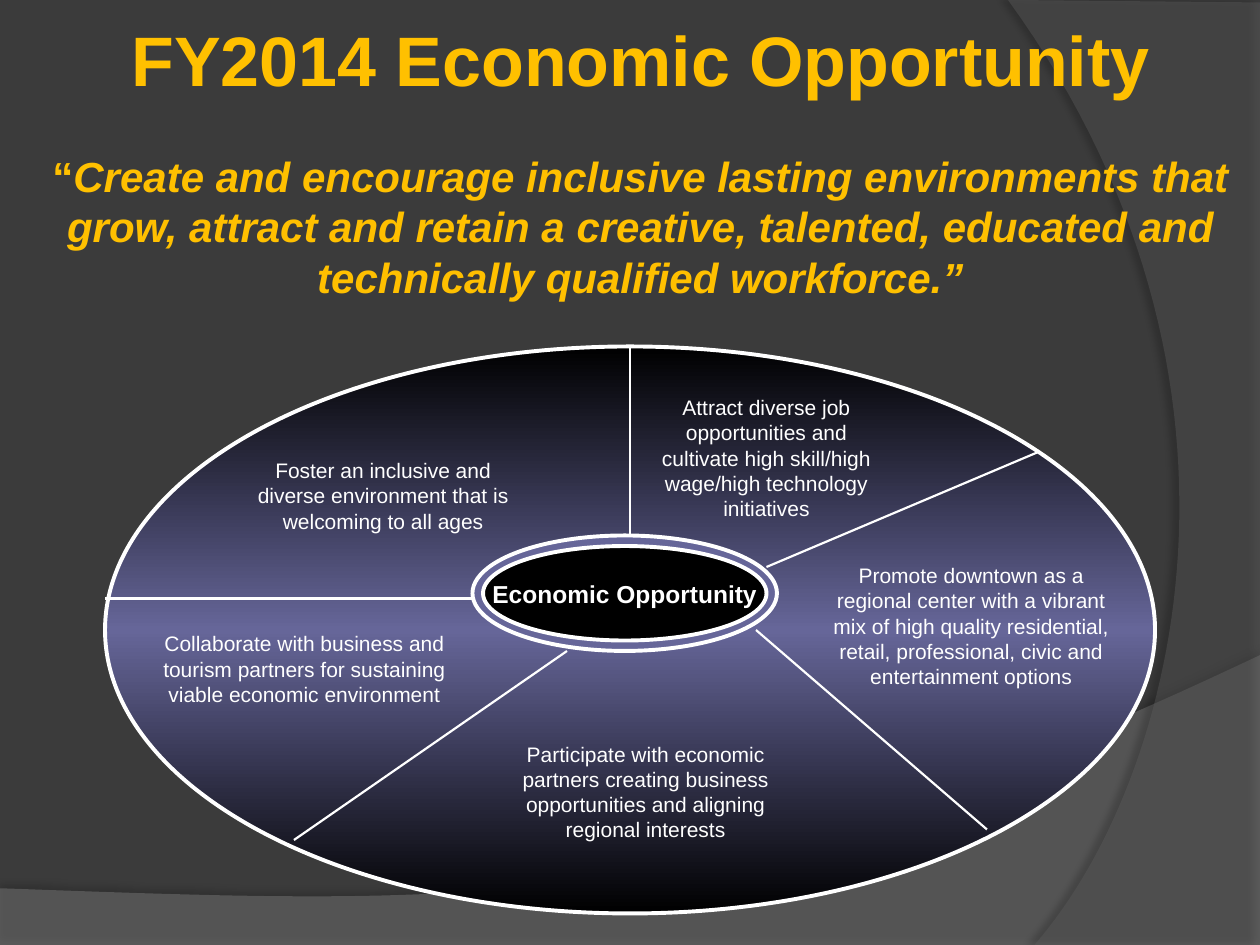
"""Build the FY2014 Economic Opportunity slide."""
from copy import deepcopy
from dataclasses import dataclass

from lxml import etree
from pptx import Presentation
from pptx.dml.color import RGBColor
from pptx.enum.shapes import MSO_CONNECTOR, MSO_SHAPE
from pptx.enum.text import MSO_ANCHOR, PP_ALIGN
from pptx.oxml.ns import qn
from pptx.util import Pt

OVAL = MSO_SHAPE.OVAL
STRAIGHT = MSO_CONNECTOR.STRAIGHT
CENTER = PP_ALIGN.CENTER
MIDDLE = MSO_ANCHOR.MIDDLE

BACKGROUND = RGBColor(0x3B, 0x3B, 0x3B)
FLOOR_GRAY = RGBColor(0x7F, 0x7F, 0x7F)
SIDE_GRAY = RGBColor(0x5E, 0x5E, 0x5E)
BLACK = RGBColor(0, 0, 0)
WHITE = RGBColor(0xFF, 0xFF, 0xFF)
VIOLET = RGBColor(0x66, 0x66, 0x99)
GOLD = RGBColor(0xFF, 0xC0, 0x00)
FONT = "Arial"
CURVE_STEPS = 60

Point = tuple[float, float]


@dataclass
class Swoosh:
    """A translucent backdrop outline: corners closed by one Bezier curve."""
    corners: list[Point]
    controls: list[Point]
    end: Point
    color: RGBColor
    alpha: int
    shadow_alpha: int
    shadow_dist: float
    shadow_angle: int


@dataclass
class Goal:
    """A goal text inside the large oval."""
    left: float
    top: float
    width: float
    height: float
    text: str


@dataclass
class Spoke:
    """A line between two sectors."""
    start: Point
    end: Point


SWOOSHES = [
    Swoosh([(0, 507.6), (0, 540), (720, 540), (720, 374.4)],
           [(402.48, 524.88), (281.52, 517.68)], (0, 507.6),
           FLOOR_GRAY, 45, 35, 3.5, 270),
    Swoosh([(720, 1.44), (720, 540), (591.12, 540)],
           [(673.2, 445.68), (732.96, 216)], (576, 0),
           SIDE_GRAY, 40, 45, 4, 180),
]
GOALS = [
    Goal(282, 420, 174, 65.5, "Participate with economic partners creating business "
         "opportunities and aligning regional interests"),
    Goal(462, 318, 186, 80, "Promote downtown as a regional center with a vibrant mix of "
         "high quality residential, retail, professional, civic and entertainment options"),
    Goal(138, 258, 162, 51, "Foster an inclusive and diverse environment that is "
         "welcoming to all ages"),
    Goal(84, 357, 180, 51, "Collaborate with business and tourism partners for "
         "sustaining viable economic environment"),
    Goal(366, 222, 144, 80, "Attract diverse job opportunities and cultivate high "
         "skill/high wage/high technology initiatives"),
]
SPOKES = [
    Spoke((360, 306), (360, 198)),
    Spoke((270, 342), (60, 342)),
    Spoke((432, 360), (564, 474)),
    Spoke((168, 480), (324, 372)),
    Spoke((438, 324), (594, 258)),
]


def bezier(a: Point, b: Point, c: Point, d: Point) -> list[Point]:
    """Sample a cubic curve, leaving out its first point."""
    points = []
    for i in range(1, CURVE_STEPS + 1):
        t = i / CURVE_STEPS
        u = 1 - t
        points.append(tuple(u**3 * w + 3 * u * u * t * x + 3 * u * t * t * y + t**3 * z
                            for w, x, y, z in zip(a, b, c, d)))
    return points


def add_alpha(color, percent: int) -> None:
    """Give a colour element an opacity."""
    etree.SubElement(color, qn("a:alpha"), val=str(percent * 1000))


def add_swoosh(shapes, swoosh: Swoosh) -> None:
    """Draw a backdrop shape with its soft shadow."""
    outline = swoosh.corners + bezier(swoosh.corners[-1], *swoosh.controls, swoosh.end)
    first, *rest = [(Pt(x), Pt(y)) for x, y in outline]
    fb = shapes.build_freeform(*first)
    fb.add_line_segments(rest)
    s = fb.convert_to_shape()
    s.fill.solid()
    s.fill.fore_color.rgb = swoosh.color
    s.line.fill.background()
    s.shadow.inherit = False
    spPr = s._element.spPr
    add_alpha(spPr.find(qn("a:solidFill"))[0], swoosh.alpha)
    shadow = etree.SubElement(spPr.find(qn("a:effectLst")), qn("a:outerShdw"),
                              blurRad=str(Pt(4)), dist=str(Pt(swoosh.shadow_dist)),
                              dir=str(swoosh.shadow_angle * 60000))
    add_alpha(etree.SubElement(shadow, qn("a:srgbClr"), val=str(BLACK)), swoosh.shadow_alpha)


def add_oval(shapes, left: float, top: float, width: float, height: float, color: RGBColor):
    """Draw a white-rimmed oval."""
    s = shapes.add_shape(OVAL, Pt(left), Pt(top), Pt(width), Pt(height))
    s.shadow.inherit = False
    s.fill.solid()
    s.fill.fore_color.rgb = color
    s.line.color.rgb = WHITE
    s.line.width = Pt(2.25)
    return s


def shade(s, colors: list[RGBColor]) -> None:
    """Fill a shape with an even top-to-bottom gradient of three colours."""
    s.fill.gradient()
    s.fill.gradient_angle = 90
    stops = s._element.spPr.find(qn("a:gradFill")).find(qn("a:gsLst"))
    stops.append(deepcopy(stops[0]))
    for i, (stop, color) in enumerate(zip(s.fill.gradient_stops, colors)):
        stop.position = i / (len(colors) - 1)
        stop.color.rgb = color


def style(p, size: float, color: RGBColor, bold: bool = False) -> None:
    """Centre a paragraph and set its font."""
    p.alignment = CENTER
    p.font.name = FONT
    p.font.size = Pt(size)
    p.font.bold = bold
    p.font.color.rgb = color


def add_text_frame(shapes, left: float, top: float, width: float, height: float):
    """Add a wrapping text box and return its text frame."""
    tf = shapes.add_textbox(Pt(left), Pt(top), Pt(width), Pt(height)).text_frame
    tf.word_wrap = True
    return tf


def add_goal(shapes, goal: Goal) -> None:
    """Write a goal in its sector."""
    p = add_text_frame(shapes, goal.left, goal.top, goal.width, goal.height).paragraphs[0]
    p.text = goal.text
    style(p, 12, WHITE)


def add_spoke(shapes, spoke: Spoke) -> None:
    """Draw a sector line."""
    s = shapes.add_connector(STRAIGHT, *map(Pt, spoke.start + spoke.end))
    s.line.color.rgb = WHITE
    s.line.width = Pt(1.25)
    etree.SubElement(s._element.spPr, qn("a:effectLst"))


def add_heading(shapes) -> None:
    """Write the title and the quoted mission."""
    tf = add_text_frame(shapes, 12, 6, 708, 172)
    p = tf.paragraphs[0]
    p.text = "FY2014 Economic Opportunity"
    style(p, 40, GOLD, bold=True)
    p = tf.add_paragraph()
    p.space_before = Pt(28.5)
    style(p, 24, GOLD, bold=True)
    p.add_run().text = "“"
    r = p.add_run()
    r.text = ("Create and encourage inclusive lasting environments that grow, attract and "
              "retain a creative, talented, educated and technically qualified workforce.”")
    r.font.italic = True


def main() -> None:
    """Build and save the slide."""
    prs = Presentation()
    prs.slide_width, prs.slide_height = Pt(720), Pt(540)
    slide = prs.slides.add_slide(prs.slide_layouts[6])
    slide.background.fill.solid()
    slide.background.fill.fore_color.rgb = BACKGROUND
    shapes = slide.shapes
    for swoosh in SWOOSHES:
        add_swoosh(shapes, swoosh)
    shade(add_oval(shapes, 60, 198, 600, 324, VIOLET), [BLACK, VIOLET, BLACK])
    add_oval(shapes, 270, 306, 174, 66, VIOLET)
    tf = add_oval(shapes, 276, 312, 162, 54, BLACK).text_frame
    tf.word_wrap = False
    tf.vertical_anchor = MIDDLE
    tf.text = "Economic Opportunity"
    style(tf.paragraphs[0], 14, WHITE, bold=True)
    for goal in GOALS:
        add_goal(shapes, goal)
    for spoke in SPOKES:
        add_spoke(shapes, spoke)
    add_heading(shapes)


    prs.save("out.pptx")


if __name__ == "__main__":
    main()
